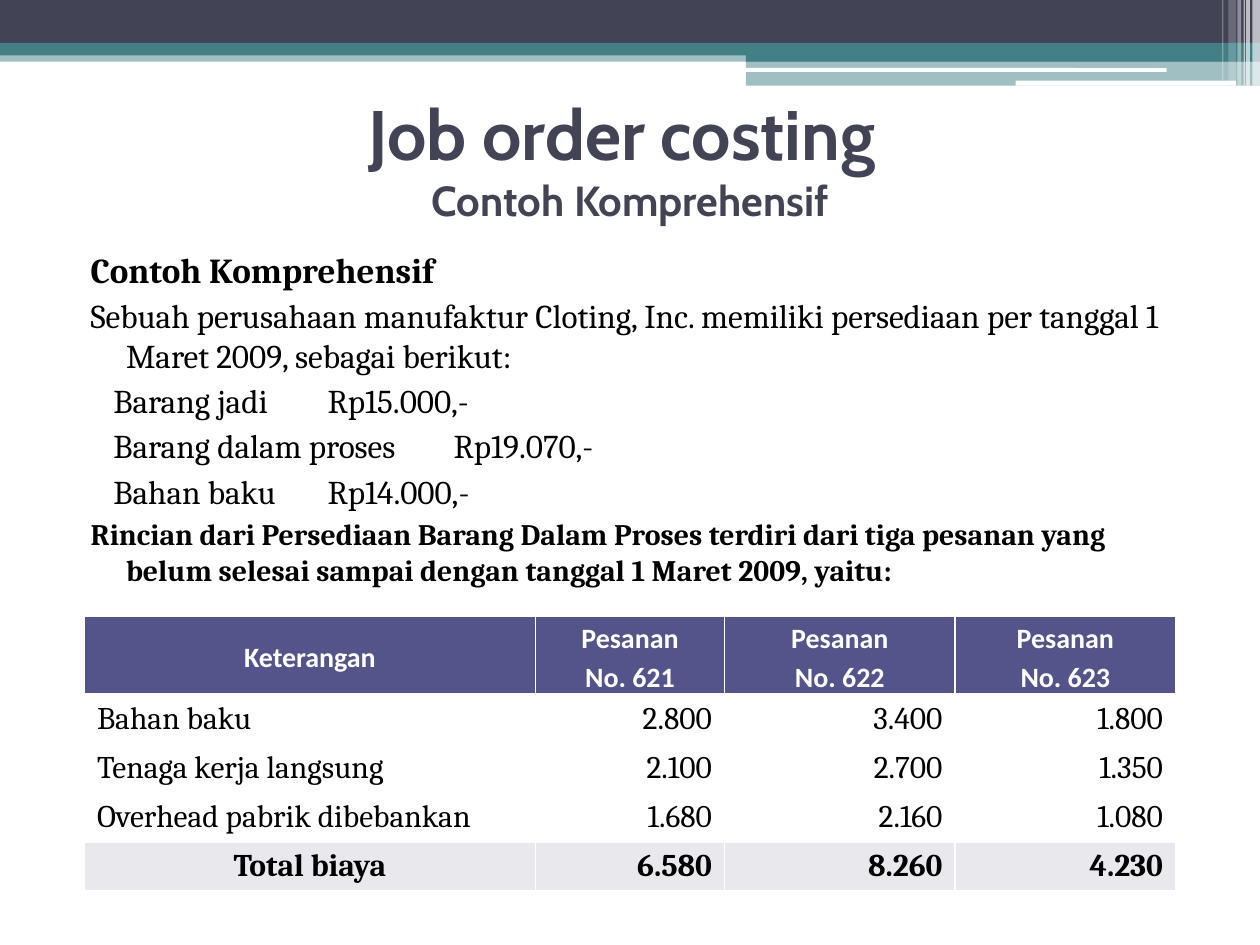
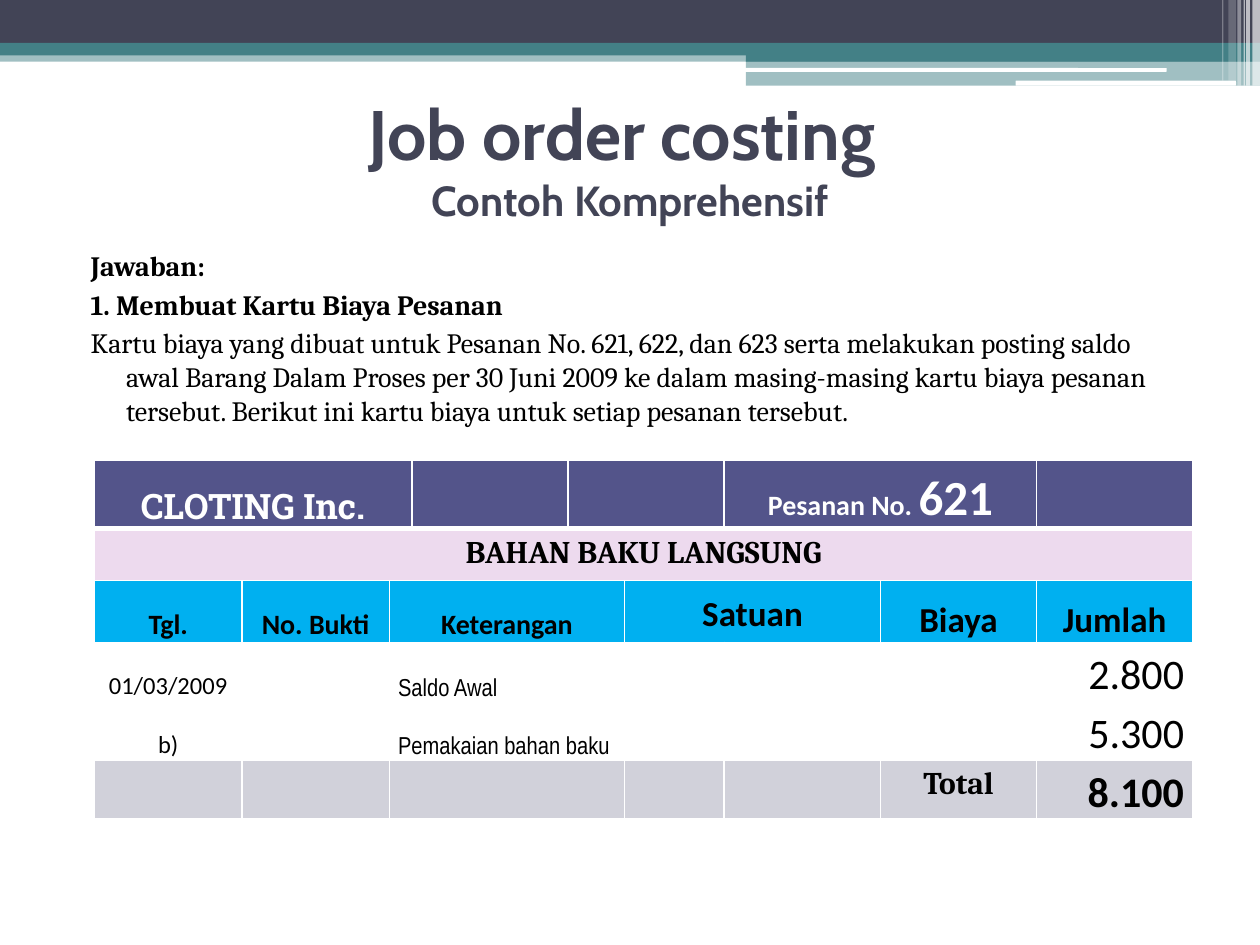
from copy import deepcopy
from dataclasses import dataclass

from lxml.etree import SubElement
from pptx import Presentation
from pptx.dml.color import RGBColor
from pptx.enum.shapes import MSO_SHAPE
from pptx.enum.text import MSO_ANCHOR, MSO_AUTO_SIZE, PP_ALIGN
from pptx.oxml import parse_xml
from pptx.oxml.ns import nsdecls, qn
from pptx.util import Inches, Pt

WHITE = RGBColor(0xFF, 0xFF, 0xFF)
BLACK = RGBColor(0x00, 0x00, 0x00)
SLATE = RGBColor(0x42, 0x44, 0x56)
TEAL = RGBColor(0x43, 0x80, 0x86)
INDIGO = RGBColor(0x53, 0x54, 0x8A)
PALE_GREY = RGBColor(0xE9, 0xE9, 0xED)
MID_GREY = RGBColor(0xD1, 0xD1, 0xDA)
PINK = RGBColor(0xED, 0xDA, 0xEE)
SKY = RGBColor(0x00, 0xB0, 0xF0)

COLUMNS, ROWS = 100, 75
LEFT, CENTER, RIGHT = PP_ALIGN.LEFT, PP_ALIGN.CENTER, PP_ALIGN.RIGHT
TOP, MIDDLE, BOTTOM = MSO_ANCHOR.TOP, MSO_ANCHOR.MIDDLE, MSO_ANCHOR.BOTTOM

BANDS = [
    ((0, 4, 100, 0.9), TEAL, 50),
    ((0, 0, 100, 3.4), SLATE, 100),
    ((0, 3.4, 100, 1), TEAL, 100),
    ((59.2, 3.9, 40.8, 1), TEAL, 100),
    ((59.2, 4.8, 40.8, 2), TEAL, 50),
]
PILLS = [(59.1, 5.4, 33.5, 0.3), (80.6, 6.4, 17.5, 0.4)]
STRIPES = [
    (99.4, 0.6, 6.8, 65),
    (98.9, 0.3, 6.8, 65),
    (98.7, 0.1, 6.8, 60),
    (98.2, 0.3, 6.8, 40),
    (97.5, 0.6, 6.4, 20),
    (97, 0.1, 6.4, 30),
]


@dataclass
class Run:
    """A piece of text with its format."""

    text: str
    size: int = 18
    bold: bool = False
    font: str = "Cambria"
    color: RGBColor = BLACK


@dataclass
class Cell:
    """A table cell: its lines of runs, alignment and column span."""

    lines: tuple = ()
    align: PP_ALIGN = CENTER
    anchor: MSO_ANCHOR = TOP
    tight: bool = False
    spacing: float = 1.0
    span: int = 1


class Deck:
    """Holds the shared style and the current slide."""

    def __init__(self):
        self.presentation = Presentation()
        self.presentation.slide_width = Inches(10)
        self.presentation.slide_height = Inches(7.5)
        self.column = self.presentation.slide_width / COLUMNS
        self.row = self.presentation.slide_height / ROWS
        self.slide = None

    def box(self, left, top, width, height):
        """Turn grid units into lengths."""
        return (round(left * self.column), round(top * self.row),
                round(width * self.column), round(height * self.row))

    def place(self, placeholder, area):
        """Move a placeholder onto the grid."""
        (placeholder.left, placeholder.top,
         placeholder.width, placeholder.height) = self.box(*area)
        frame = placeholder.text_frame
        frame.word_wrap = True
        frame.auto_size = MSO_AUTO_SIZE.NONE
        return frame

    def add_runs(self, paragraph, runs):
        """Add formatted runs to a paragraph."""
        for piece in runs:
            run = paragraph.add_run()
            run.text = piece.text
            run.font.size = Pt(piece.size)
            run.font.bold = piece.bold
            run.font.name = piece.font
            run.font.color.rgb = piece.color

    def new_slide(self, heading, subheading):
        """Start a slide with the bands and a two-line title."""
        layout = self.presentation.slide_layouts[1]
        self.slide = self.presentation.slides.add_slide(layout)
        for area, color, opacity in BANDS:
            self.band(area, color, opacity)
        for area in PILLS:
            self.band(area, WHITE, 100, MSO_SHAPE.ROUNDED_RECTANGLE)
        for left, width, height, opacity in STRIPES:
            self.band((left, 0, width, height), WHITE, opacity)
        frame = self.place(self.slide.shapes.title, (5, 6.7, 90, 11.7))
        frame.vertical_anchor = MIDDLE
        title = frame.paragraphs[0]
        title.alignment = CENTER
        self.add_runs(title, [Run(heading, 40, True, "Cabin", SLATE)])
        title.add_line_break()
        title._p[-1].append(deepcopy(title.runs[0]._r.rPr))
        self.add_runs(title, [Run(subheading, 24, True, "Cabin", SLATE)])

    def band(self, area, color, opacity, outline=MSO_SHAPE.RECTANGLE):
        """Draw one strip of the header."""
        strip = self.slide.shapes.add_shape(outline, *self.box(*area))
        strip.shadow.inherit = False
        strip.line.fill.background()
        strip.fill.solid()
        strip.fill.fore_color.rgb = color
        if opacity < 100:
            tint = strip.fill._xPr.find(".//" + qn("a:srgbClr"))
            SubElement(tint, qn("a:alpha"), val=str(opacity * 1000))

    def body(self, lines):
        """Fill the body; a tab in a line makes it an indented price row."""
        frame = self.place(self.slide.placeholders[1], (5, 19.2, 90, 52.7))
        for index, line in enumerate(lines):
            paragraph = frame.add_paragraph() if index else frame.paragraphs[0]
            paragraph.space_before = Pt(3)
            properties = paragraph._p.get_or_add_pPr()
            SubElement(properties, qn("a:buNone"))
            priced = "\t" in line.text
            margin, indent = (0, 3) if priced else (4, -2.8)
            properties.set("marL", str(round(margin * self.column)))
            properties.set("indent", str(round(indent * self.column)))
            if priced:
                stops = SubElement(properties, qn("a:tabLst"))
                SubElement(stops, qn("a:tab"), algn="l",
                           pos=str(round(44 * self.column)))
            self.add_runs(paragraph, [line])

    def table(self, left, top, widths, heights, rows):
        """Build a table from (fill, cells) rows."""
        area = self.box(left, top, sum(widths), sum(heights))
        table = self.slide.shapes.add_table(
            len(rows), len(widths), *area).table
        table.first_row = table.horz_banding = False
        for column, width in zip(table.columns, widths):
            column.width = round(width * self.column)
        for row, height in zip(table.rows, heights):
            row.height = round(height * self.row)
        for r, (fill, cells) in enumerate(rows):
            c = 0
            for content in cells:
                target = table.cell(r, c)
                if content.span > 1:
                    target.merge(table.cell(r, c + content.span - 1))
                self.cell(target, content, fill, r)
                c += content.span

    def cell(self, target, content, fill, row):
        """Format and fill one table cell."""
        target.fill.solid()
        target.fill.fore_color.rgb = fill
        target.vertical_anchor = content.anchor
        if content.tight:
            target.margin_left = target.margin_right = round(0.7 * self.column)
            target.margin_top = target.margin_bottom = 0
        weights = {"L": 1, "R": 1, "T": 3 if row == 1 else 1,
                   "B": 3 if row == 0 else 1}
        for index, (side, weight) in enumerate(weights.items()):
            target._tc.tcPr.insert(index, parse_xml(
                f'<a:ln{side} {nsdecls("a")} w="{Pt(weight)}"><a:solidFill>'
                f'<a:srgbClr val="{WHITE}"/></a:solidFill></a:ln{side}>'))
        frame = target.text_frame
        for index, runs in enumerate(content.lines):
            paragraph = frame.add_paragraph() if index else frame.paragraphs[0]
            paragraph.alignment = content.align
            paragraph.line_spacing = content.spacing
            self.add_runs(paragraph, runs)


def tight(*lines, align=CENTER, anchor=BOTTOM, span=1):
    """Make a cell with narrow margins and open line spacing."""
    return Cell(lines, align, anchor, True, 1.15, span)


def label(text, size=16, bold=True, color=BLACK):
    """Make a run in the table's sans-serif font."""
    return Run(text, size, bold, "Calibri", color)


def inventory_slide(deck):
    """Opening inventories and the cost of the three unfinished orders."""
    deck.new_slide("Job order costing ", "Contoh Komprehensif")
    deck.body([
        Run("Contoh Komprehensif", 20, True),
        Run("Sebuah perusahaan manufaktur Cloting, Inc. memiliki persediaan "
            "per tanggal 1 Maret 2009, sebagai berikut:", 19),
        Run("Barang jadi\tRp15.000,-", 19),
        Run("Barang dalam proses\tRp19.070,-", 19),
        Run("Bahan baku\tRp14.000,-", 19),
        Run("Rincian dari Persediaan Barang Dalam Proses terdiri dari tiga "
            "pesanan yang belum selesai sampai dengan tanggal 1 Maret 2009, "
            "yaitu:", 17, True),
    ])
    heads = [("Keterangan",)]
    heads += [("Pesanan", f"No. {order}") for order in (621, 622, 623)]
    rows = [(INDIGO, [tight(*[[label(line, color=WHITE)] for line in head],
                            anchor=MIDDLE) for head in heads])]
    costs = [
        ("Bahan baku", "2.800", "3.400", "1.800"),
        ("Tenaga kerja langsung", "2.100", "2.700", "1.350"),
        ("Overhead pabrik dibebankan", "1.680", "2.160", "1.080"),
        ("Total biaya", "6.580", "8.260", "4.230"),
    ]
    for name, *amounts in costs:
        total = name == "Total biaya"
        cells = [Cell(([Run(name, bold=total)],), CENTER if total else LEFT)]
        cells += [Cell(([Run(amount, bold=total)],), RIGHT)
                  for amount in amounts]
        rows.append((PALE_GREY if total else WHITE, cells))
    deck.table(6.7, 48.9, [35.8, 15, 18.3, 17.5], [5.1] + [3.4] * 4, rows)


def cost_card_slide(deck):
    """Cost card of order 621."""
    deck.new_slide("Job order costing ", "Contoh Komprehensif")
    deck.body([
        Run("Jawaban:", 16, True),
        Run("1. Membuat Kartu Biaya Pesanan", 16, True),
        Run("Kartu biaya yang dibuat untuk Pesanan No. 621, 622, dan 623 "
            "serta melakukan posting saldo awal Barang Dalam Proses per 30 "
            "Juni 2009 ke dalam masing-masing kartu biaya pesanan tersebut. "
            "Berikut ini kartu biaya untuk setiap pesanan tersebut.", 16),
    ])
    company = Run("CLOTING Inc.", 20, True, "Roboto Slab", WHITE)
    order = [label("Pesanan No. ", color=WHITE),
             label("621", 28, color=WHITE)]
    rows = [
        (INDIGO, [tight([company], span=3), Cell(), Cell(span=2),
                  tight(order, span=2), Cell()]),
        (PINK, [Cell(([Run("BAHAN BAKU LANGSUNG", bold=True)],), span=9)]),
        (SKY, [tight([label("Tgl.")]), tight([label("No. Bukti")]),
               tight([label("Keterangan")], span=3),
               Cell(([label("Satuan", 20)],), spacing=1.15, span=2),
               tight([label("Biaya", 20)]), tight([label("Jumlah", 20)])]),
    ]
    entries = [("01/03/2009", "Saldo Awal", "2.800"),
               ("b)", "Pemakaian bahan baku", "5.300")]
    for date, detail, amount in entries:
        rows.append((WHITE, [
            tight([label(date, 14, False)]), Cell(),
            tight([Run(detail, 14, font="Arial Narrow")], align=LEFT, span=3),
            Cell(), Cell(), Cell(),
            tight([label(amount, 24, False)], align=RIGHT, anchor=TOP)]))
    rows.append((MID_GREY, [
        Cell(), Cell(), Cell(span=3), Cell(), Cell(),
        Cell(([Run("Total", bold=True)],)),
        tight([label("8.100", 24)], align=RIGHT)]))
    widths = [11.7, 11.7, 1.4, 12.4, 4.5, 7.9] + [12.4] * 3
    deck.table(7.5, 36.5, widths, [4.1] * 6, rows)


def main():
    """Build both slides and save them."""
    deck = Deck()
    inventory_slide(deck)
    cost_card_slide(deck)
    deck.presentation.save("out.pptx")


if __name__ == "__main__":
    main()
